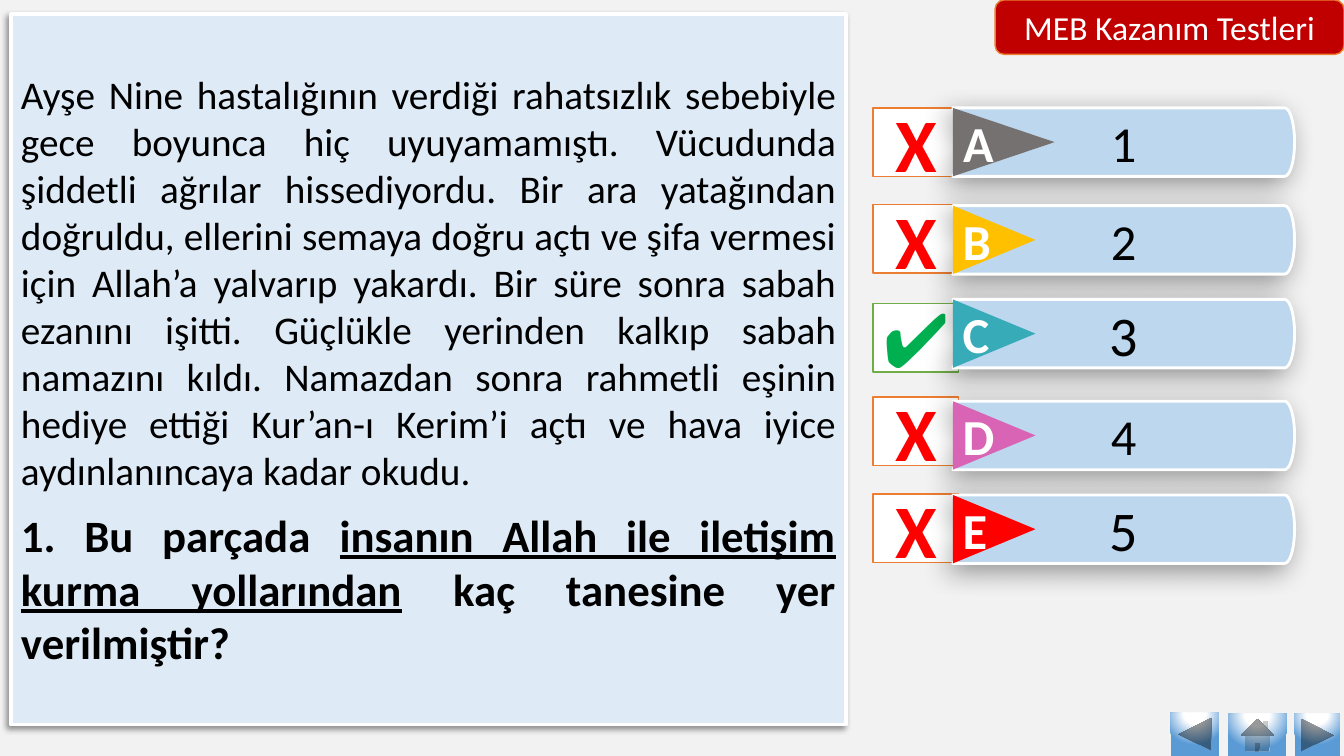
import math
import pptx
import pptx.util
import pptx.oxml
import pptx.oxml.ns
import pptx.dml.color
import pptx.enum.shapes
import pptx.enum.text

Inches = pptx.util.Inches
Pt = pptx.util.Pt
RGBColor = pptx.dml.color.RGBColor
MSO_SHAPE = pptx.enum.shapes.MSO_SHAPE
PP_ALIGN = pptx.enum.text.PP_ALIGN
qn = pptx.oxml.ns.qn
NS = 'xmlns:a="http://schemas.openxmlformats.org/drawingml/2006/main"'

BACKGROUND = RGBColor(0xF2, 0xF2, 0xF2)
WHITE = RGBColor(0xFF, 0xFF, 0xFF)
BLACK = RGBColor(0x00, 0x00, 0x00)
RED = RGBColor(0xFF, 0x00, 0x00)
DARK_RED = RGBColor(0xC0, 0x00, 0x00)
ORANGE = RGBColor(0xED, 0x7D, 0x31)
GREEN = RGBColor(0x70, 0xAD, 0x47)
CHECK_GREEN = RGBColor(0x00, 0xB0, 0x50)
PALE_BLUE = RGBColor(0xDE, 0xEB, 0xF7)
OPTION_BLUE = RGBColor(0xBD, 0xD7, 0xEE)
GREY = RGBColor(0x76, 0x71, 0x71)
YELLOW = RGBColor(0xFF, 0xC0, 0x00)
TEAL = RGBColor(0x38, 0xAB, 0xB9)
PINK = RGBColor(0xD9, 0x64, 0xB5)


def style(sp, fill, line=None, width=1, shadow=None):
    sp.fill.solid()
    sp.fill.fore_color.rgb = fill
    if line is None:
        sp.line.fill.background()
    else:
        sp.line.color.rgb = line
        sp.line.width = Pt(width)
    sp.shadow.inherit = False
    if shadow:
        blur, dist = shadow
        effects = sp._element.spPr.find(qn("a:effectLst"))
        effects.append(pptx.oxml.parse_xml(
            f'<a:outerShdw {NS} blurRad="{Pt(blur)}" dist="{Pt(dist)}" dir="8100000" '
            'algn="tr" rotWithShape="0"><a:srgbClr val="000000">'
            '<a:alpha val="40000"/></a:srgbClr></a:outerShdw>'))


def write(sp, text, size, color, bold=False, align=PP_ALIGN.CENTER):
    tf = sp.text_frame
    tf.word_wrap = True
    tf.vertical_anchor = pptx.enum.text.MSO_ANCHOR.MIDDLE
    p = tf.paragraphs[0]
    p.text = text
    p.alignment = align
    p.font.name = "Calibri"
    p.font.size = Pt(size)
    p.font.bold = bold
    p.font.color.rgb = color


prs = pptx.Presentation()
prs.slide_width = Inches(13.33)
prs.slide_height = Inches(7.5)
s = prs.slides.add_slide(prs.slide_layouts[6])
s.background.fill.solid()
s.background.fill.fore_color.rgb = BACKGROUND

ROW_H = 0.68
OPTIONS = [
    ("A", "1", 36, GREY, 1.01, 1.07, 1.07),
    ("B", "2", 36, YELLOW, 0.82, 2.03, 2.04),
    ("C", "3", 40, TEAL, 0.82, 3.01, 2.97),
    ("D", "4", 36, PINK, 0.82, 3.94, 3.98),
    ("E", "5", 40, RED, 0.82, 4.9, 4.91),
]
CORRECT = "C"

for letter, answer, size, color, depth, mark_top, bar_top in OPTIONS:
    mark = s.shapes.add_shape(MSO_SHAPE.RECTANGLE, Inches(8.66), Inches(mark_top),
                              Inches(0.85), Inches(ROW_H))
    if letter == CORRECT:
        style(mark, WHITE, GREEN)
        write(mark, "✔", 54, CHECK_GREEN, align=PP_ALIGN.LEFT)
    else:
        style(mark, WHITE, ORANGE)
        write(mark, "X", 54, RED, bold=True)

passage = s.shapes.add_shape(MSO_SHAPE.RECTANGLE, Inches(0.11), Inches(0.14),
                             Inches(8.28), Inches(7.05))
style(passage, PALE_BLUE, WHITE, 2.5, shadow=(4, 3))
write(passage,
      "Ayşe Nine hastalığının verdiği rahatsızlık sebebiyle gece boyunca hiç "
      "uyuyamamıştı. Vücudunda şiddetli ağrılar hissediyordu. Bir ara yatağından "
      "doğruldu, ellerini semaya doğru açtı ve şifa vermesi için Allah’a yalvarıp "
      "yakardı. Bir süre sonra sabah ezanını işitti. Güçlükle yerinden kalkıp sabah "
      "namazını kıldı. Namazdan sonra rahmetli eşinin hediye ettiği Kur’an-ı Kerim’i "
      "açtı ve hava iyice aydınlanıncaya kadar okudu.",
      28, BLACK, align=PP_ALIGN.JUSTIFY)
p = passage.text_frame.add_paragraph()
p.alignment = PP_ALIGN.JUSTIFY
p.space_before = Pt(10)
p.font.name = "Calibri"
p.font.size = Pt(32)
p.font.bold = True
p.font.color.rgb = BLACK
for text, underlined in [("1. Bu parçada ", False),
                         ("insanın Allah ile iletişim kurma yollarından", True),
                         (" kaç tanesine yer verilmiştir?", False)]:
    r = p.add_run()
    r.text = text
    r.font.underline = underlined

BAR_LEFT, BAR_RIGHT, END_W, NOTCH = 9.45, 12.84, 0.1, 0.18
for letter, answer, size, color, depth, mark_top, bar_top in OPTIONS:
    group = s.shapes.add_group_shape()
    middle = bar_top + ROW_H / 2
    points = []
    for degrees in range(-90, 91, 10):
        angle = math.radians(degrees)
        points.append((Inches(BAR_RIGHT - END_W + END_W * math.cos(angle)),
                       Inches(middle + ROW_H / 2 * math.sin(angle))))
    points.append((Inches(BAR_LEFT), Inches(bar_top + ROW_H)))
    points.append((Inches(BAR_LEFT + NOTCH), Inches(middle)))
    outline = group.shapes.build_freeform(Inches(BAR_LEFT), Inches(bar_top))
    outline.add_line_segments(points, close=True)
    bar = outline.convert_to_shape()
    style(bar, OPTION_BLUE, WHITE, 2, shadow=(20, 7))
    write(bar, answer, size, BLACK)

    flag = group.shapes.add_shape(
        MSO_SHAPE.ISOSCELES_TRIANGLE, Inches(BAR_LEFT + (depth - ROW_H) / 2),
        Inches(middle - depth / 2), Inches(ROW_H), Inches(depth))
    flag.rotation = 90
    style(flag, color)
    write(flag, letter, 36, WHITE, bold=True)
    flag.text_frame._txBody.bodyPr.set("vert", "vert270")

title = s.shapes.add_shape(MSO_SHAPE.ROUNDED_RECTANGLE, Inches(9.87), Inches(0),
                           Inches(3.46), Inches(0.54))
style(title, DARK_RED, ORANGE)
write(title, "MEB Kazanım Testleri", 24, WHITE)

for kind, left, top, width in [
        (MSO_SHAPE.ACTION_BUTTON_BACK_OR_PREVIOUS, 11.61, 7.07, 0.48),
        (MSO_SHAPE.ACTION_BUTTON_FORWARD_OR_NEXT, 12.84, 7.08, 0.45),
        (MSO_SHAPE.ACTION_BUTTON_HOME, 12.18, 7.08, 0.58)]:
    button = s.shapes.add_shape(kind, Inches(left), Inches(top), Inches(width), Inches(0.43))
    style(button, WHITE)
    spPr = button._element.spPr
    spPr.replace(spPr.find(qn("a:solidFill")), pptx.oxml.parse_xml(
        f'<a:gradFill {NS} rotWithShape="1"><a:gsLst>'
        '<a:gs pos="0"><a:srgbClr val="FFFFFF"/></a:gs>'
        '<a:gs pos="35000"><a:srgbClr val="FFFFFF"/></a:gs>'
        '<a:gs pos="100000"><a:srgbClr val="5B9BD5"/></a:gs></a:gsLst>'
        '<a:path path="circle"><a:fillToRect l="50000" t="-80000" r="50000" b="180000"/>'
        '</a:path></a:gradFill>'))

prs.save("out.pptx")
